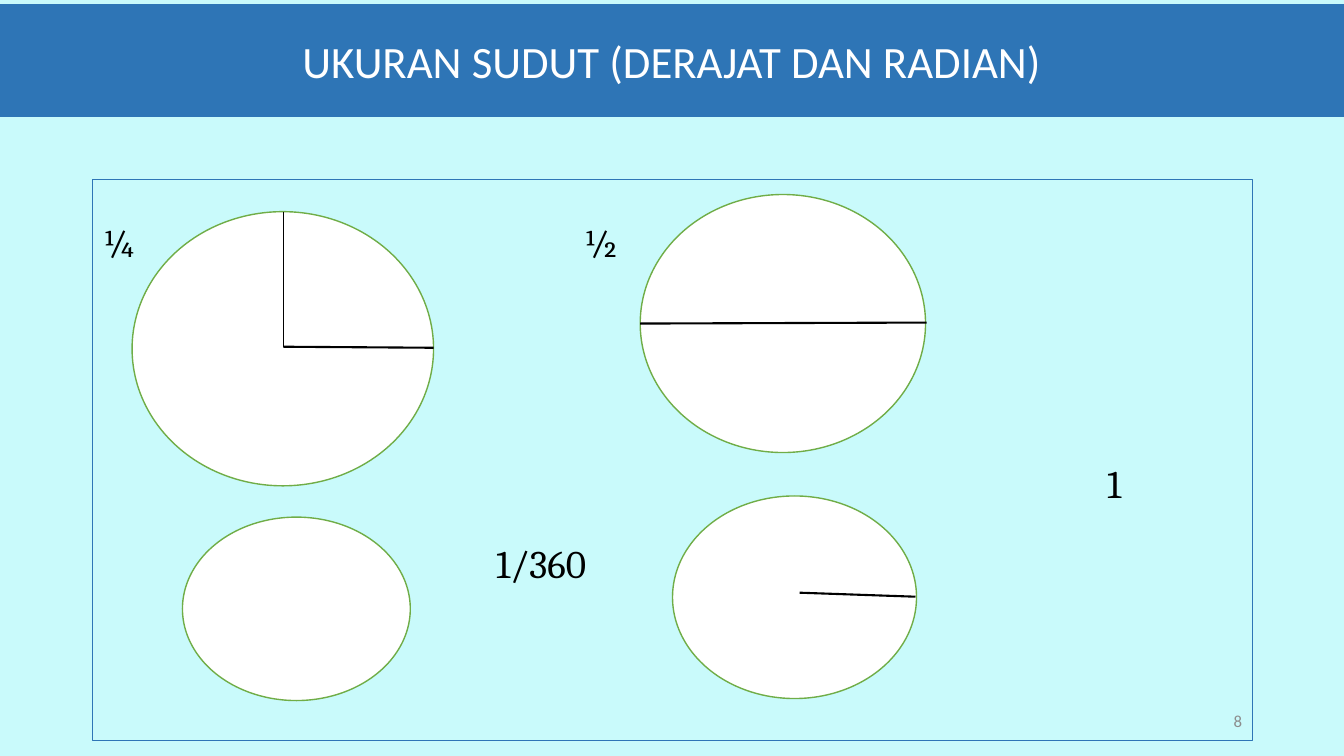
"""Build the slide on angle measures in degrees and radians."""
from typing import NamedTuple, Optional

import pptx
import pptx.util
from lxml import etree
from pptx.dml.color import RGBColor
from pptx.enum.shapes import MSO_CONNECTOR, MSO_SHAPE
from pptx.enum.text import MSO_ANCHOR, PP_ALIGN
from pptx.oxml.ns import qn
from pptx.util import Inches

SKY = RGBColor(0xC9, 0xFA, 0xFB)
BLUE = RGBColor(0x2E, 0x75, 0xB6)
GREEN = RGBColor(0x70, 0xAD, 0x47)
GRAY = RGBColor(0x8C, 0x8C, 0x8C)
WHITE = RGBColor(0xFF, 0xFF, 0xFF)
BLACK = RGBColor(0x00, 0x00, 0x00)


class Box(NamedTuple):
    left: float
    top: float
    width: float
    height: float


class Figure(NamedTuple):
    kind: MSO_SHAPE
    box: Box
    fill: Optional[RGBColor]
    line: Optional[RGBColor]
    weight: float = 1


class Segment(NamedTuple):
    x1: float
    y1: float
    x2: float
    y2: float
    weight: float = 1.5


class Label(NamedTuple):
    text: str
    box: Box
    size: float = 28
    font: str = "Cambria"
    color: RGBColor = BLACK
    align: PP_ALIGN = PP_ALIGN.LEFT


TITLE_BOX = Box(0, 0.04, 13.33, 1.12)
DISC = MSO_SHAPE.FLOWCHART_CONNECTOR

FIGURES = [
    Figure(MSO_SHAPE.RECTANGLE, TITLE_BOX, BLUE, None),
    Figure(MSO_SHAPE.RECTANGLE, Box(0.92, 1.78, 11.5, 5.57), None, BLUE, 0.75),
    Figure(DISC, Box(1.31, 2.1, 2.99, 2.72), WHITE, GREEN),
    Figure(DISC, Box(6.35, 1.93, 2.83, 2.56), WHITE, GREEN),
    Figure(MSO_SHAPE.OVAL, Box(1.81, 5.13, 2.26, 1.82), WHITE, GREEN),
    Figure(DISC, Box(6.67, 4.92, 2.42, 2.01), WHITE, GREEN),
]

SEGMENTS = [
    Segment(6.35, 3.21, 9.19, 3.2),
    Segment(4.3, 3.45, 2.81, 3.44),
    Segment(2.81, 2.1, 2.81, 3.44, 1),
    Segment(9.08, 5.92, 7.93, 5.88),
]

LABELS = [
    Label("UKURAN SUDUT (DERAJAT DAN RADIAN)", TITLE_BOX, 32, "Calibri",
          WHITE, PP_ALIGN.CENTER),
    Label("¼", Box(1.02, 2.15, 0.5, 0.5)),
    Label("½", Box(5.79, 2.15, 0.5, 0.5)),
    Label("1", Box(10.98, 4.54, 0.5, 0.5)),
    Label("1/360", Box(4.92, 5.33, 1.2, 0.5)),
    Label("8", Box(9.42, 6.95, 2.9, 0.4), 12, "Calibri", GRAY, PP_ALIGN.RIGHT),
]


def add_figure(s: pptx.slide.Slide, figure: Figure) -> None:
    sp = s.shapes.add_shape(figure.kind, *map(Inches, figure.box))
    sp.shadow.inherit = False
    if figure.fill is None:
        sp.fill.background()
    else:
        sp.fill.solid()
        sp.fill.fore_color.rgb = figure.fill
    if figure.line is None:
        sp.line.fill.background()
    else:
        sp.line.color.rgb = figure.line
        sp.line.width = pptx.util.Pt(figure.weight)


def add_segment(s: pptx.slide.Slide, segment: Segment) -> None:
    ends = map(Inches, segment[:4])
    sp = s.shapes.add_connector(MSO_CONNECTOR.STRAIGHT, *ends)
    sp.line.color.rgb = BLACK
    sp.line.width = pptx.util.Pt(segment.weight)
    etree.SubElement(sp._element.spPr, qn("a:effectLst"))


def add_label(s: pptx.slide.Slide, label: Label) -> None:
    tf = s.shapes.add_textbox(*map(Inches, label.box)).text_frame
    tf.word_wrap = True
    tf.vertical_anchor = MSO_ANCHOR.MIDDLE
    tf.margin_left = tf.margin_right = tf.margin_top = tf.margin_bottom = 0
    p = tf.paragraphs[0]
    p.alignment = label.align
    r = p.add_run()
    r.text = label.text
    r.font.size = pptx.util.Pt(label.size)
    r.font.name = label.font
    r.font.color.rgb = label.color


def main() -> None:
    prs = pptx.Presentation()
    prs.slide_width, prs.slide_height = Inches(13.33), Inches(7.5)
    s = prs.slides.add_slide(prs.slide_layouts[6])
    s.background.fill.solid()
    s.background.fill.fore_color.rgb = SKY
    for figure in FIGURES:
        add_figure(s, figure)
    for segment in SEGMENTS:
        add_segment(s, segment)
    for label in LABELS:
        add_label(s, label)
    prs.save("out.pptx")


if __name__ == "__main__":
    main()
